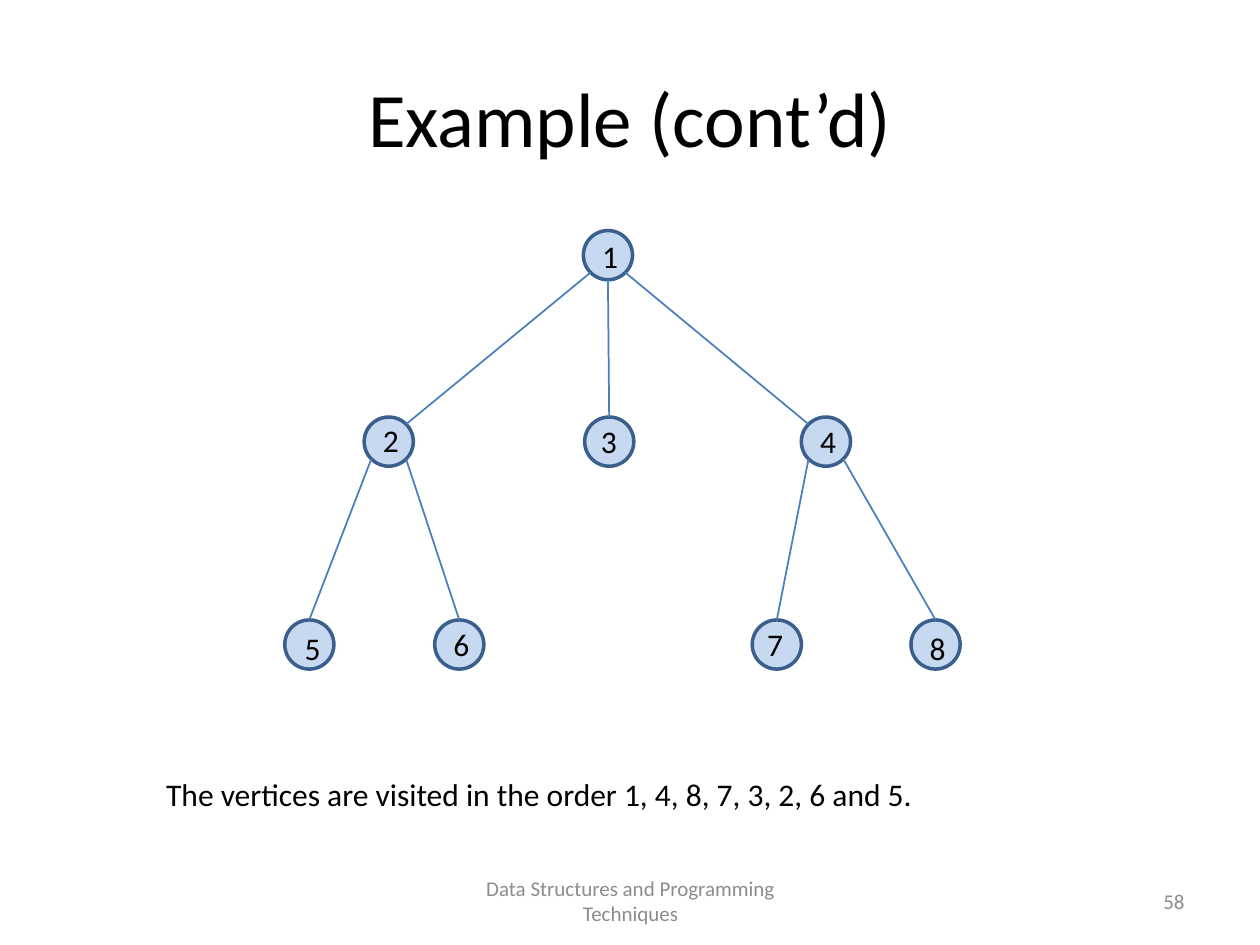
from dataclasses import dataclass
from math import sqrt

from lxml import etree
from pptx import Presentation
from pptx.dml.color import RGBColor
from pptx.enum.shapes import MSO_CONNECTOR, MSO_SHAPE
from pptx.enum.text import MSO_ANCHOR, PP_ALIGN
from pptx.oxml.ns import qn
from pptx.util import Inches, Pt


@dataclass(frozen=True)
class Theme:
    font: str = "Calibri"
    text: RGBColor = RGBColor(0x00, 0x00, 0x00)
    muted: RGBColor = RGBColor(0x8C, 0x8C, 0x8C)
    node: RGBColor = RGBColor(0xC6, 0xD9, 0xF1)
    outline: RGBColor = RGBColor(0x3A, 0x5F, 0x8C)
    edge: RGBColor = RGBColor(0x4B, 0x7E, 0xBC)
    title_size: Pt = Pt(44)
    body_size: Pt = Pt(18)
    footer_size: Pt = Pt(12)


theme = Theme()
prs = Presentation()
prs.slide_width, prs.slide_height = Inches(10), Inches(7.5)
s = prs.slides.add_slide(prs.slide_layouts[6])


def add_text(text, left, top, width, height, size=theme.body_size,
             color=theme.text, align=PP_ALIGN.CENTER, anchor=MSO_ANCHOR.TOP):
    sp = s.shapes.add_textbox(Inches(left), Inches(top), Inches(width), Inches(height))
    tf = sp.text_frame
    tf.word_wrap = True
    tf.vertical_anchor = anchor
    p = tf.paragraphs[0]
    p.alignment = align
    r = p.add_run()
    r.text = text
    r.font.name = theme.font
    r.font.size = size
    r.font.color.rgb = color


# Title and footer
add_text("Example (cont’d)", 0.5, 0.3, 9, 1.25, theme.title_size, anchor=MSO_ANCHOR.MIDDLE)
add_text("Data Structures and Programming Techniques", 3.42, 6.95, 3.17, 0.4,
         theme.footer_size, theme.muted, anchor=MSO_ANCHOR.MIDDLE)
add_text("58", 7.17, 6.95, 2.33, 0.4, theme.footer_size, theme.muted,
         PP_ALIGN.RIGHT, MSO_ANCHOR.MIDDLE)

# Tree vertices: left and top of each circle
DIAMETER = 0.39
RADIUS = DIAMETER / 2
LEVELS = (1.83, 3.31, 4.92)
vertices = {
    1: (4.63, LEVELS[0]),
    2: (2.89, LEVELS[1]), 3: (4.64, LEVELS[1]), 4: (6.36, LEVELS[1]),
    5: (2.26, LEVELS[2]), 6: (3.45, LEVELS[2]), 7: (5.97, LEVELS[2]), 8: (7.23, LEVELS[2]),
}
circles = {}
for number, (left, top) in vertices.items():
    sp = s.shapes.add_shape(MSO_SHAPE.OVAL, Inches(left), Inches(top),
                            Inches(DIAMETER), Inches(DIAMETER))
    sp.shadow.inherit = False
    sp.fill.solid()
    sp.fill.fore_color.rgb = theme.node
    sp.line.color.rgb = theme.outline
    sp.line.width = Pt(2)
    circles[number] = sp

# Tree edges: directions from circle centre to the point on its rim
DIAGONAL = 1 / sqrt(2)
TOP, BOTTOM = (0, -1), (0, 1)
TOP_LEFT, TOP_RIGHT = (-DIAGONAL, -DIAGONAL), (DIAGONAL, -DIAGONAL)
BOTTOM_LEFT, BOTTOM_RIGHT = (-DIAGONAL, DIAGONAL), (DIAGONAL, DIAGONAL)
edges = [
    (1, BOTTOM_LEFT, 2, TOP_RIGHT), (1, BOTTOM_RIGHT, 4, TOP_LEFT), (1, BOTTOM, 3, TOP),
    (2, BOTTOM_LEFT, 5, TOP), (2, BOTTOM_RIGHT, 6, TOP),
    (4, BOTTOM_LEFT, 7, TOP), (4, BOTTOM_RIGHT, 8, TOP),
]
for parent, start, child, end in edges:
    points = [Inches(corner + RADIUS * (1 + step))
              for number, direction in ((parent, start), (child, end))
              for corner, step in zip(vertices[number], direction)]
    line = s.shapes.add_connector(MSO_CONNECTOR.STRAIGHT, *points)
    if end == TOP:
        line.end_connect(circles[child], 0)
    line.line.color.rgb = theme.edge
    line.line.width = Pt(1)
    etree.SubElement(line._element.spPr, qn("a:effectLst"))

# Vertex numbers
labels = {1: (4.68, 1.83), 2: (2.94, 3.29), 3: (4.67, 3.3), 4: (6.41, 3.3),
          5: (2.32, 4.94), 6: (3.5, 4.91), 7: (5.99, 4.91), 8: (7.28, 4.94)}
for number, (left, top) in labels.items():
    add_text(str(number), left, top, 0.28, 0.4)

# Visiting order
add_text("The vertices are visited in the order 1, 4, 8, 7, 3, 2, 6 and 5.",
         1.22, 6.1, 7.48, 0.4, align=PP_ALIGN.LEFT)

prs.save("out.pptx")
